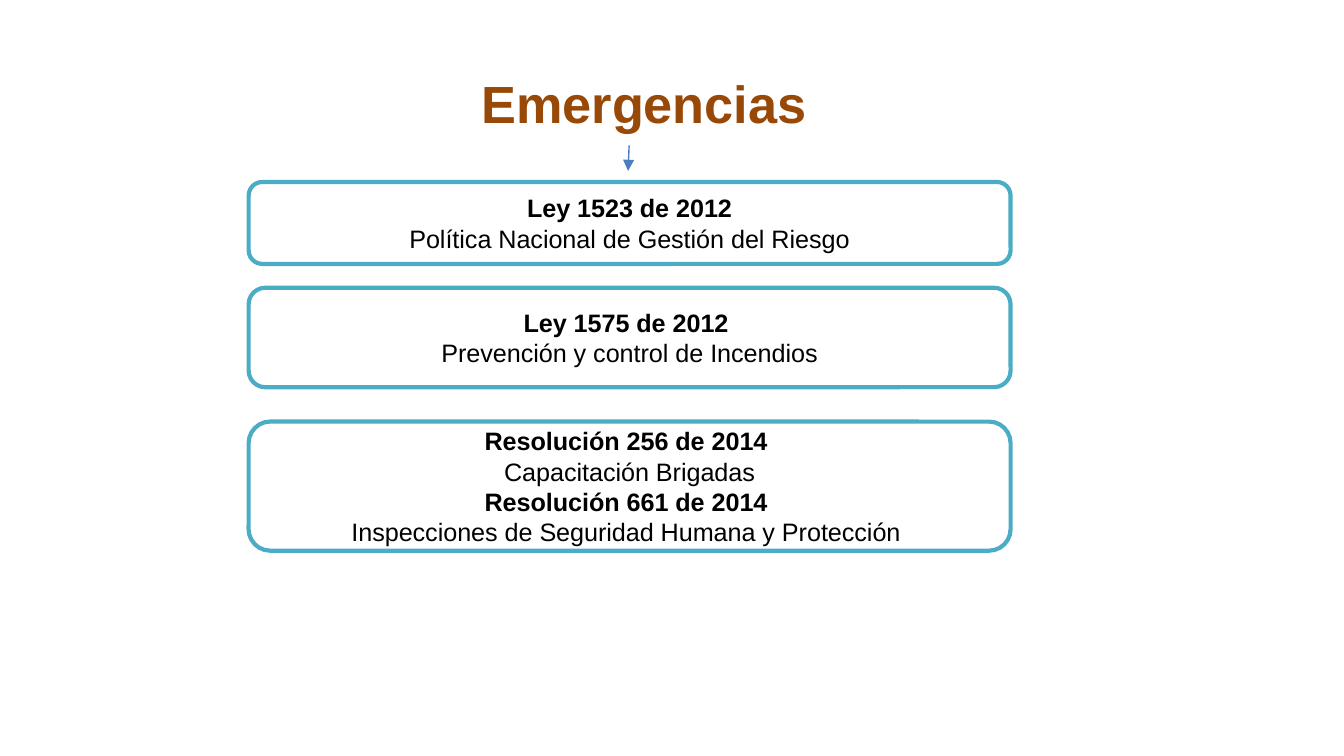
"""Build the slide on Colombian emergency regulations."""
from dataclasses import dataclass

from lxml import etree
from pptx import Presentation
from pptx.dml.color import RGBColor
from pptx.enum import shapes, text
from pptx.oxml.ns import qn
from pptx.slide import Slide
from pptx.util import Cm, Pt


@dataclass(frozen=True)
class Theme:
    font: str = "Arial"
    title: RGBColor = RGBColor(0x98, 0x48, 0x07)
    body: RGBColor = RGBColor(0, 0, 0)
    fill: RGBColor = RGBColor(0xFF, 0xFF, 0xFF)
    border: RGBColor = RGBColor(0x4B, 0xAC, 0xC6)
    arrow: RGBColor = RGBColor(0x4B, 0x7E, 0xBC)
    title_size: float = 28
    body_size: float = 13.5


@dataclass(frozen=True)
class Regulation:
    name: str
    subject: str


@dataclass(frozen=True)
class Card:
    top: float
    height: float
    regulations: tuple[Regulation, ...]


THEME = Theme()
LEFT = 4.7
CARD_WIDTH = 14.4
CARDS = (
    Card(3.44, 1.55, (Regulation("Ley 1523 de 2012", "Política Nacional de Gestión del Riesgo"),)),
    Card(5.44, 1.88, (Regulation("Ley 1575 de 2012 ", "Prevención y control de Incendios"),)),
    Card(7.97, 2.44, (
        Regulation("Resolución 256 de 2014 ", "Capacitación Brigadas"),
        Regulation("Resolución 661 de 2014 ", "Inspecciones de Seguridad Humana y Protección "),
    )),
)


def add_run(paragraph, wording: str, size: float, color: RGBColor, bold: bool) -> None:
    """Append one formatted run to a centred paragraph."""
    paragraph.alignment = text.PP_ALIGN.CENTER
    run = paragraph.add_run()
    run.text = wording
    run.font.name = THEME.font
    run.font.size = Pt(size)
    run.font.bold = bold
    run.font.color.rgb = color


def set_title(slide: Slide, wording: str) -> None:
    """Place and fill the title placeholder."""
    title = slide.shapes.title
    title.left, title.top, title.width, title.height = Cm(LEFT), Cm(1.22), Cm(14.94), Cm(1.45)
    title.text_frame.vertical_anchor = text.MSO_ANCHOR.MIDDLE
    add_run(title.text_frame.paragraphs[0], wording, THEME.title_size, THEME.title, True)


def add_card(slide: Slide, card: Card) -> None:
    """Draw a rounded card listing its regulations."""
    shape = slide.shapes.add_shape(
        shapes.MSO_SHAPE.ROUNDED_RECTANGLE, Cm(LEFT), Cm(card.top), Cm(CARD_WIDTH), Cm(card.height)
    )
    shape.shadow.inherit = False
    shape.fill.solid()
    shape.fill.fore_color.rgb = THEME.fill
    shape.line.color.rgb = THEME.border
    shape.line.width = Pt(2.25)
    frame = shape.text_frame
    frame.word_wrap = True
    frame.vertical_anchor = text.MSO_ANCHOR.MIDDLE
    lines = [
        line
        for regulation in card.regulations
        for line in ((regulation.name, True), (regulation.subject, False))
    ]
    for index, (wording, bold) in enumerate(lines):
        paragraph = frame.add_paragraph() if index else frame.paragraphs[0]
        add_run(paragraph, wording, THEME.body_size, THEME.body, bold)


def add_arrow(slide: Slide) -> None:
    """Draw the arrow leading from the title to the cards."""
    arrow = slide.shapes.add_connector(
        shapes.MSO_CONNECTOR.STRAIGHT, Cm(11.89), Cm(2.75), Cm(11.87), Cm(3.23)
    )
    arrow.line.color.rgb = THEME.arrow
    arrow.line.width = Pt(0.75)
    properties = arrow.element.spPr
    etree.SubElement(properties.find(qn("a:ln")), qn("a:tailEnd"), type="triangle")
    etree.SubElement(properties, qn("a:effectLst"))


def main() -> None:
    """Assemble and save the presentation."""
    presentation = Presentation()
    presentation.slide_width, presentation.slide_height = Cm(25.4), Cm(14.29)
    slide = presentation.slides.add_slide(presentation.slide_layouts[5])
    set_title(slide, "Emergencias")
    for card in CARDS:
        add_card(slide, card)
    add_arrow(slide)
    presentation.save("out.pptx")


if __name__ == "__main__":
    main()
